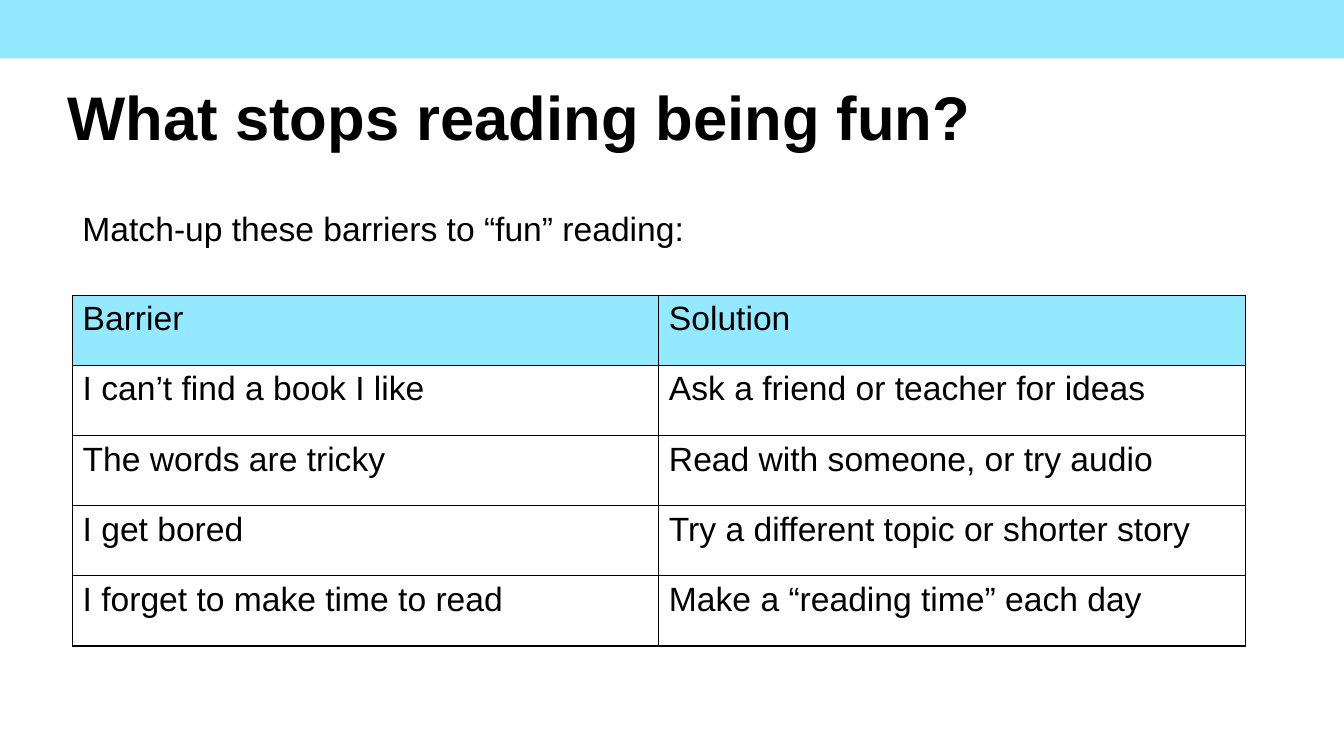
from dataclasses import dataclass

from lxml.etree import SubElement
from pptx import Presentation
from pptx.dml.color import RGBColor
from pptx.enum.shapes import MSO_SHAPE
from pptx.enum.text import MSO_ANCHOR, PP_ALIGN
from pptx.oxml.ns import qn
from pptx.util import Inches, Pt


@dataclass(frozen=True)
class Theme:
    """Hold the colours, font and sizes of the slide."""
    ink: str = "000000"
    accent: str = "94E8FF"
    font: str = "Arial"
    title_size: int = 44
    body_size: int = 24
    border_width: int = 1


THEME = Theme()
ROWS = [
    ("Barrier", "Solution"),
    ("I can’t find a book I like", "Ask a friend or teacher for ideas"),
    ("The words are tricky", "Read with someone, or try audio"),
    ("I get bored", "Try a different topic or shorter story"),
    ("I forget to make time to read", "Make a “reading time” each day"),
]


def write_text(frame, text, size=THEME.body_size, bold=False, spacing=1.0, anchor=MSO_ANCHOR.TOP):
    """Write one left-aligned paragraph in a text frame."""
    frame.word_wrap = True
    frame.vertical_anchor = anchor
    para = frame.paragraphs[0]
    para.alignment = PP_ALIGN.LEFT
    para.line_spacing = spacing
    span = para.add_run()
    span.text = text
    span.font.name = THEME.font
    span.font.size = Pt(size)
    span.font.bold = bold
    span.font.color.rgb = RGBColor.from_string(THEME.ink)


def add_banner(page, left, top, width, height):
    """Draw the coloured band."""
    banner = page.shapes.add_shape(MSO_SHAPE.RECTANGLE, left, top, width, height)
    banner.shadow.inherit = False
    banner.fill.solid()
    banner.fill.fore_color.rgb = RGBColor.from_string(THEME.accent)
    banner.line.fill.background()


def place_title(page, text, left, top, width, height):
    """Place and format the title placeholder."""
    title = page.shapes.title
    title.left, title.top, title.width, title.height = left, top, width, height
    write_text(title.text_frame, text, size=THEME.title_size, bold=True, spacing=0.9,
               anchor=MSO_ANCHOR.MIDDLE)


def add_instruction(page, text, left, top, width, height):
    """Add the line that introduces the table."""
    box = page.shapes.add_textbox(left, top, width, height)
    write_text(box.text_frame, text)


def outline_cell(cell):
    """Draw a solid border on all four sides of a cell."""
    properties = cell._tc.get_or_add_tcPr()
    for side in ("a:lnL", "a:lnR", "a:lnT", "a:lnB"):
        border = SubElement(properties, qn(side), w=str(Pt(THEME.border_width)))
        SubElement(SubElement(border, qn("a:solidFill")), qn("a:srgbClr"), val=THEME.ink)


def add_match_table(page, rows, left, top, width, height):
    """Add the table of barriers and solutions with a filled header row."""
    table = page.shapes.add_table(len(rows), len(rows[0]), left, top, width, height).table
    table.horz_banding = False
    table.first_row = False
    for row_index, texts in enumerate(rows):
        for column_index, text in enumerate(texts):
            cell = table.cell(row_index, column_index)
            write_text(cell.text_frame, text)
            outline_cell(cell)
            if row_index == 0:
                cell.fill.solid()
                cell.fill.fore_color.rgb = RGBColor.from_string(THEME.accent)
            else:
                cell.fill.background()


def main():
    """Build and save the slide."""
    deck = Presentation()
    deck.slide_width, deck.slide_height = Inches(13.33), Inches(7.5)
    page = deck.slides.add_slide(deck.slide_layouts[5])
    add_banner(page, 0, 0, deck.slide_width, Inches(0.58))
    place_title(page, "What stops reading being fun?",
                Inches(0.57), Inches(0.8), Inches(11.5), Inches(0.8))
    add_instruction(page, "Match-up these barriers to “fun” reading:",
                    Inches(0.72), Inches(2.01), Inches(12.6), Inches(0.5))
    add_match_table(page, ROWS, Inches(0.72), Inches(2.93), Inches(11.63), Inches(3.48))
    deck.save("out.pptx")


if __name__ == "__main__":
    main()
